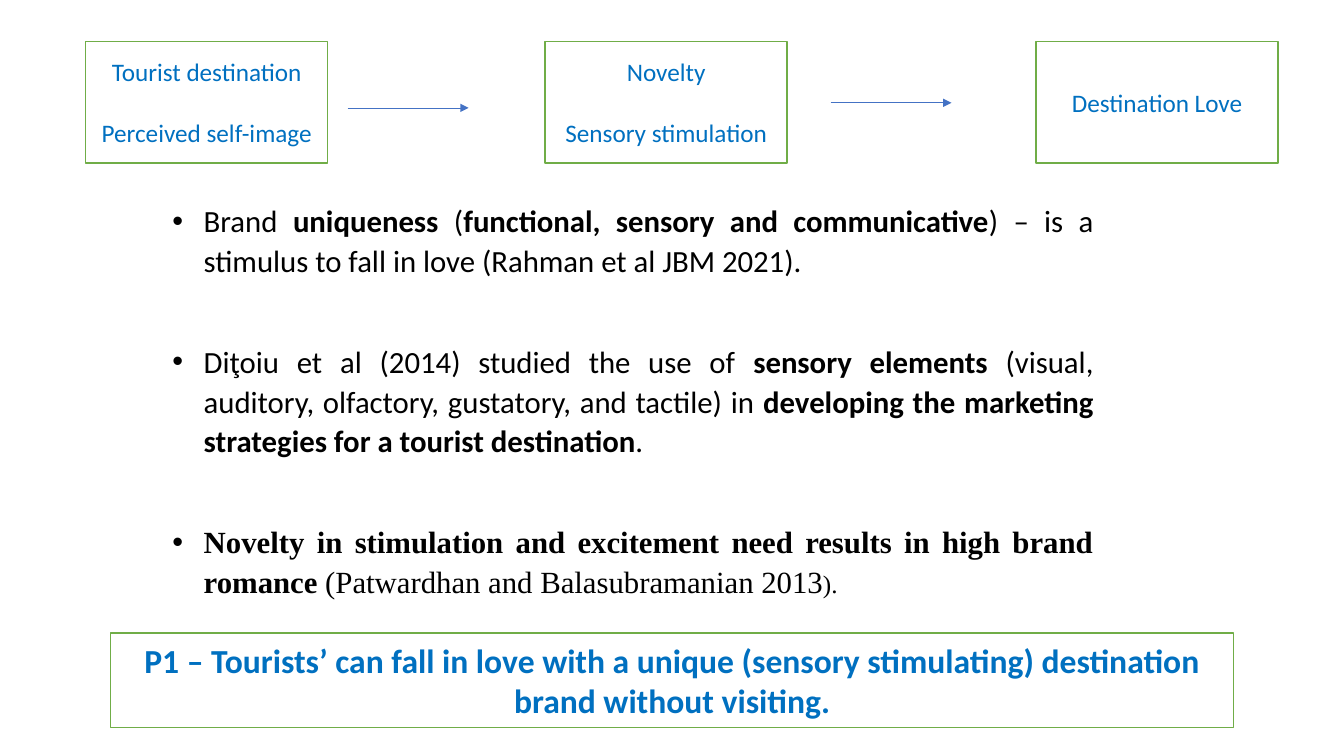
from pptx import Presentation
from pptx.dml.color import RGBColor
from pptx.enum.shapes import MSO_CONNECTOR, MSO_SHAPE
from pptx.enum.text import MSO_ANCHOR, MSO_AUTO_SIZE, PP_ALIGN
from pptx.oxml.ns import qn
from pptx.util import Cm, Pt
from lxml.etree import SubElement

HUES = {"fill": "FFFFFF", "edge": "70AD47", "label": "0070C0",
        "arrow": "4472C4", "text": "000000"}
SANS, SERIF = "Calibri", "Times New Roman"

STEPS = [
    (0, "Tourist destination\nPerceived self-image"),
    (11.58, "Novelty\nSensory stimulation"),
    (23.95, "Destination Love"),
]
ARROWS = [(6.6, 1.68), (18.77, 1.55)]
CLAIM = ("P1 – Tourists’ can fall in love with a unique (sensory stimulating) "
         "destination brand without visiting.")
POINTS = [
    (SANS, [("Brand ", False, 22), ("uniqueness", True, 22), (" (", False, 22),
            ("functional, sensory and communicative", True, 22),
            (") – is a stimulus to fall in love (Rahman et al JBM 2021).", False, 22)]),
    (SANS, [("Diţoiu et al (2014) studied the use of ", False, 22),
            ("sensory elements ", True, 22),
            ("(visual, auditory, olfactory, gustatory, and tactile) in ", False, 22),
            ("developing the marketing strategies for a tourist destination", True, 22),
            (".", False, 22)]),
    (SERIF, [("Novelty in stimulation and excitement need results in high brand romance ",
              True, 22),
             ("(Patwardhan and Balasubramanian 2013", False, 22), (").", False, 18)]),
]


def hue(name):
    return RGBColor.from_string(HUES[name])


def style(run, size, bold, color, face=SANS):
    font = run.font
    font.name, font.size, font.bold = face, Pt(size), bold
    font.color.rgb = hue(color)


def add_box(slide, x, y, w, h, text, size, bold=False):
    box = slide.shapes.add_shape(MSO_SHAPE.RECTANGLE, Cm(x), Cm(y), Cm(w), Cm(h))
    box.shadow.inherit = False
    box.fill.solid()
    box.fill.fore_color.rgb = hue("fill")
    box.line.color.rgb = hue("edge")
    box.line.width = Pt(1)
    frame = box.text_frame
    frame.word_wrap = True
    frame.vertical_anchor = MSO_ANCHOR.MIDDLE
    frame.text = text
    for i, para in enumerate(frame.paragraphs):
        para.alignment = PP_ALIGN.CENTER
        para.space_before = Pt(22 if i else 0)
        for run in para.runs:
            style(run, size, bold, "label")


def add_arrow(slide, x, y, w):
    arrow = slide.shapes.add_connector(
        MSO_CONNECTOR.STRAIGHT, Cm(x), Cm(y), Cm(x + w), Cm(y))
    arrow.line.color.rgb = hue("arrow")
    arrow.line.width = Pt(0.5)
    SubElement(arrow.line._get_or_add_ln(), qn("a:tailEnd"), type="triangle")
    SubElement(arrow._element.spPr, qn("a:effectLst"))


def add_flow(slide, x, y, w, h):
    for dx, text in STEPS:
        add_box(slide, x + dx, y, w, h, text, 18)
    for dx, dy in ARROWS:
        add_arrow(slide, x + dx, y + dy, w / 2)


def add_list(slide, x, y, w, h):
    body = slide.placeholders[1]
    body.left, body.top, body.width, body.height = Cm(x), Cm(y), Cm(w), Cm(h)
    frame = body.text_frame
    frame.word_wrap = True
    frame.auto_size = MSO_AUTO_SIZE.NONE
    frame.vertical_anchor = MSO_ANCHOR.TOP
    for i, (face, parts) in enumerate(POINTS):
        para = frame.add_paragraph() if i else frame.paragraphs[0]
        para.alignment = PP_ALIGN.JUSTIFY
        para.line_spacing = 1.07
        para.space_before, para.space_after = Pt(0), Pt(44)
        props = para._p.get_or_add_pPr()
        props.set("marL", str(Cm(0.79)))
        props.set("indent", str(-Cm(0.79)))
        for text, bold, size in parts:
            run = para.add_run()
            run.text = text
            style(run, size, bold, "text", face)


def main():
    deck = Presentation()
    deck.slide_width, deck.slide_height = Cm(33.87), Cm(19.05)
    slide = deck.slides.add_slide(deck.slide_layouts[1])
    title = slide.shapes.title._element
    title.getparent().remove(title)
    add_list(slide, 4.09, 4.9, 23.72, 10.29)
    add_flow(slide, 2.16, 1.04, 6.1, 3.07)
    add_box(slide, 2.79, 15.95, 28.3, 2.39, CLAIM, 24, True)
    deck.save("out.pptx")


if __name__ == "__main__":
    main()
